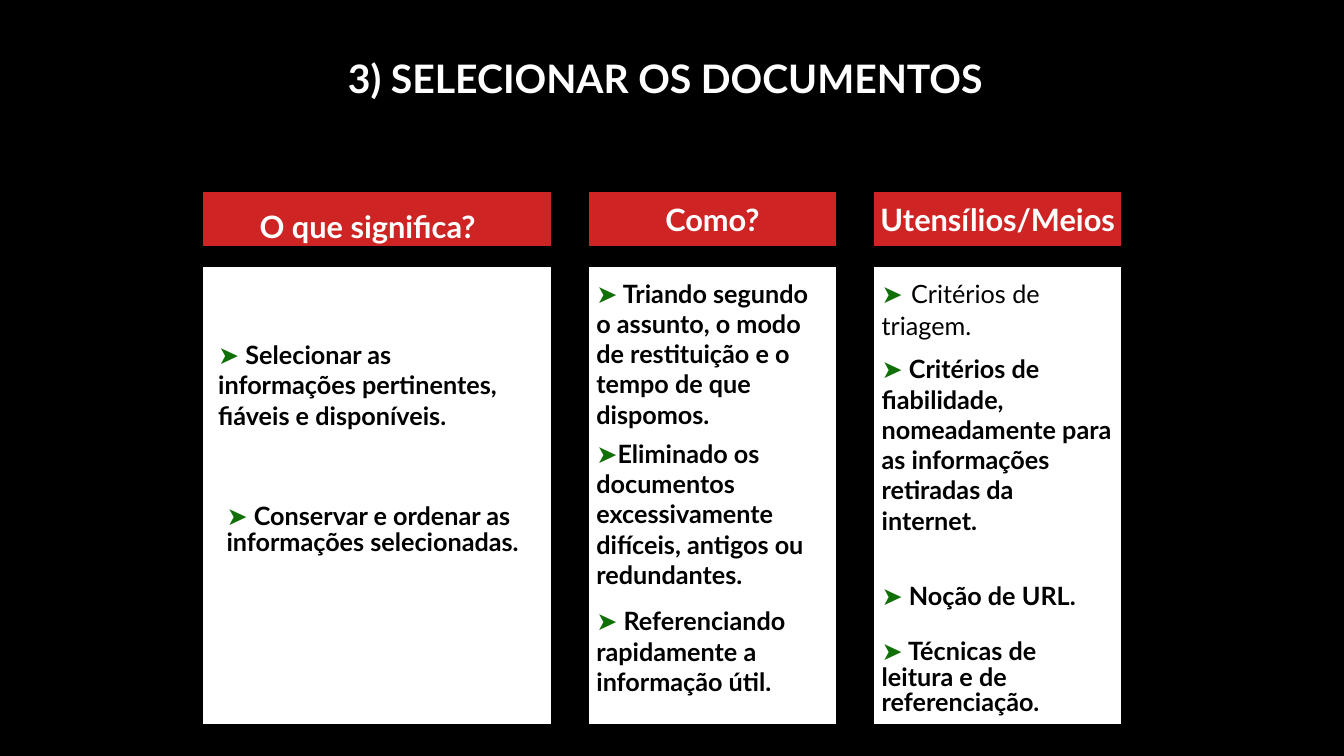
from dataclasses import dataclass
from pptx import Presentation
from pptx.dml.color import RGBColor as Rgb
from pptx.enum.shapes import MSO_SHAPE as Shape
from pptx.enum.text import MSO_ANCHOR as Anchor, PP_ALIGN as Align
from pptx.util import Cm, Pt


@dataclass(frozen=True)
class Theme:
    black: str = "000000"
    white: str = "FFFFFF"
    red: str = "CE2424"
    green: str = "116F07"
    font: str = "Lato"
    serif: str = "Times New Roman"
    title: int = 28
    head: int = 22
    body: int = 18
    space: int = 24
    edge: float = 3.5


@dataclass
class Note:
    top: float
    width: float
    height: float
    gap: str
    words: str
    left: float = 0
    lines: float = 1
    light: bool = False


@dataclass
class Column:
    width: float
    head: str
    notes: list
    inset: tuple = None


theme = Theme()

LEFT, GAP = 5.05, 0.84
HEAD_TOP, HEAD_TALL = 4.78, 1.47
BODY_TOP, BODY_TALL = 6.68, 11.63

COLUMNS = [
    Column(8.89, "O que significa?", [
        Note(1.75, 8.46, 2.62, " ", "Selecionar as informações pertinentes, fiáveis e disponíveis.", left=0.2),
        Note(5.92, 8.26, 2.21, " ", "Conservar e ordenar as informações selecionadas.", left=0.41, lines=0.85),
    ], inset=(0.2, 0.33, 8.03, 1.19)),
    Column(6.35, "Como?", [
        Note(0.2, 6.35, 4.06, " ", "Triando segundo o assunto, o modo de restituição e o tempo de que dispomos."),
        Note(4.24, 6.35, 4.06, "", "Eliminado os documentos excessivamente difíceis, antigos ou redundantes."),
        Note(8.46, 6.15, 2.54, " ", "Referenciando rapidamente a informação útil."),
    ]),
    Column(6.35, "Utensílios/Meios", [
        Note(0, 6.35, 2.03, " ", "Critérios de triagem.", light=True),
        Note(2.11, 6.35, 5.59, " ",
             "Critérios de fiabilidade, nomeadamente para as informações retiradas da internet."),
        Note(7.82, 6.15, 1.02, " ", "Noção de URL."),
        Note(9.32, 6.15, 2.21, " ", "Técnicas de leitura e de referenciação.", lines=0.85),
    ]),
]


def add_run(para, text, size, color, bold=True, font=theme.font):
    run = para.add_run()
    run.text = text
    run.font.size = Pt(size)
    run.font.bold = bold
    run.font.name = font
    run.font.color.rgb = Rgb.from_string(color)


def add_text(slide, left, top, width, height):
    box = slide.shapes.add_textbox(Cm(left), Cm(top), Cm(width), Cm(height))
    box.text_frame.word_wrap = True
    return box.text_frame


def add_panel(slide, left, top, width, height, color):
    panel = slide.shapes.add_shape(Shape.RECTANGLE, Cm(left), Cm(top), Cm(width), Cm(height))
    panel.shadow.inherit = False
    panel.fill.solid()
    panel.fill.fore_color.rgb = Rgb.from_string(color)
    panel.line.color.rgb = Rgb.from_string(theme.black)
    panel.line.width = Pt(theme.edge)
    return panel.text_frame


def add_title(slide, left, top, width, height):
    frame = add_text(slide, left, top, width, height)
    frame.vertical_anchor = Anchor.BOTTOM
    para = frame.paragraphs[0]
    para.alignment = Align.CENTER
    para.line_spacing = 0.9
    add_run(para, "3) SELECIONAR OS DOCUMENTOS", theme.title, theme.white)


def add_head(slide, column, left, top, width, height):
    frame = add_panel(slide, left, top, width, height, theme.red)
    if column.inset:
        right, down, wide, tall = column.inset
        frame = add_text(slide, left + right, top + down, wide, tall)
    else:
        frame.word_wrap = False
        frame.vertical_anchor = Anchor.MIDDLE
    para = frame.paragraphs[0]
    para.alignment = Align.CENTER
    add_run(para, column.head, theme.head, theme.white)


def add_note(slide, note, left, top):
    frame = add_text(slide, left + note.left, top + note.top, note.width, note.height)
    para = frame.paragraphs[0]
    para.line_spacing = note.lines
    add_run(para, "➤", theme.body, theme.green)
    if note.light:
        add_run(para, note.gap, theme.space, theme.black, False, theme.serif)
        add_run(para, note.words, theme.body, theme.black, False)
    else:
        add_run(para, note.gap + note.words, theme.body, theme.black)


def add_body(slide, column, left, top, width, height):
    add_panel(slide, left, top, width, height, theme.white)
    for note in column.notes:
        add_note(slide, note, left, top)


def main():
    deck = Presentation()
    deck.slide_width, deck.slide_height = Cm(33.87), Cm(19.05)
    slide = deck.slides.add_slide(deck.slide_layouts[6])
    slide.background.fill.solid()
    slide.background.fill.fore_color.rgb = Rgb.from_string(theme.black)
    add_title(slide, 0, 0.91, 33.53, 1.78)
    left = LEFT
    for column in COLUMNS:
        add_body(slide, column, left, BODY_TOP, column.width, BODY_TALL)
        add_head(slide, column, left, HEAD_TOP, column.width, HEAD_TALL)
        left += column.width + GAP
    deck.save("out.pptx")


if __name__ == "__main__":
    main()
